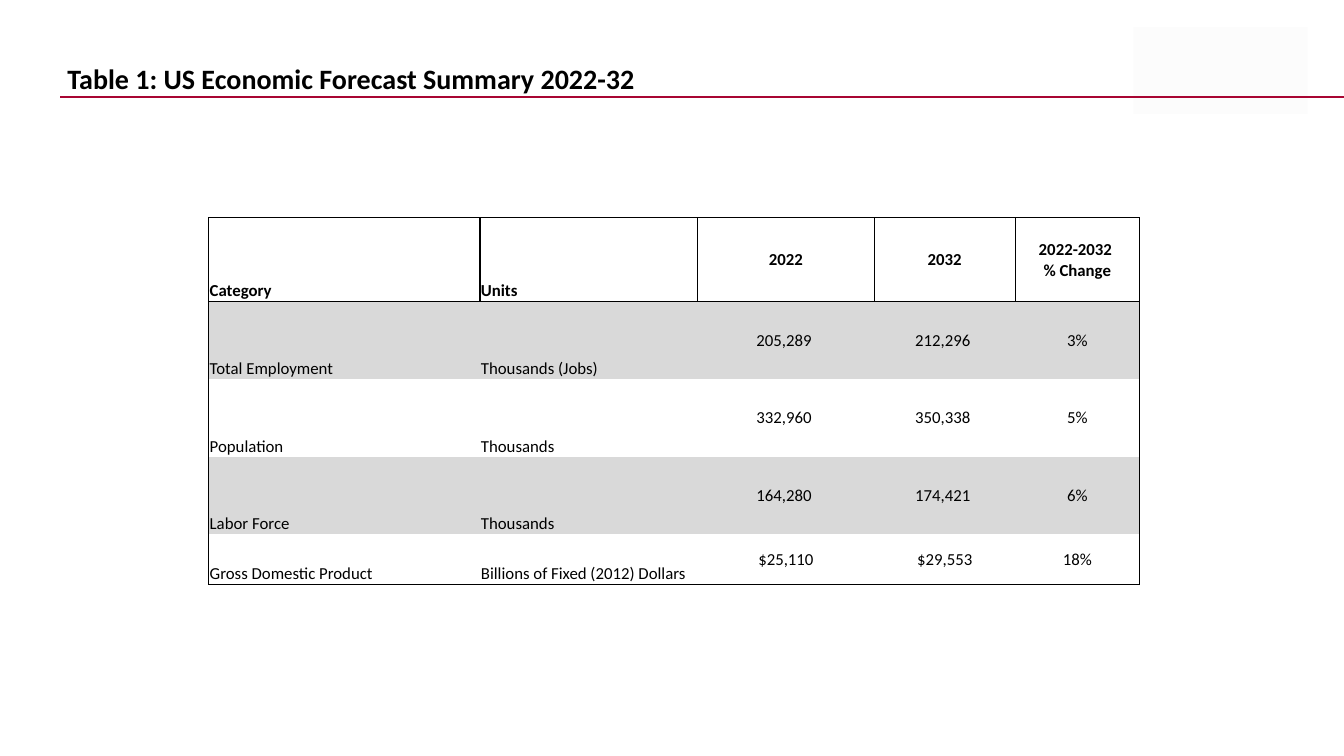
from lxml.etree import SubElement as Sub
from pptx import Presentation
from pptx.dml.color import RGBColor as RGB
from pptx.enum.shapes import MSO_CONNECTOR as LINK, MSO_SHAPE as FORM
from pptx.enum.text import MSO_ANCHOR as ANCHOR, PP_ALIGN as ALIGN
from pptx.oxml import parse_xml
from pptx.oxml.ns import nsdecls, qn
from pptx.util import Inches, Pt

TITLE = "Table 1: US Economic Forecast Summary 2022-32"
ROWS = [
    ("Category", "Units", "2022", "2032", "2022-2032 \n% Change"),
    ("Total Employment", "Thousands (Jobs)", "205,289 ", "212,296 ", "3%"),
    ("Population", "Thousands", "332,960 ", "350,338 ", "5%"),
    ("Labor Force", "Thousands", "164,280 ", "174,421 ", "6%"),
    ("Gross Domestic Product", "Billions of Fixed (2012) Dollars",
     "$25,110", "$29,553", "18%"),
]
WIDTHS = (2.69, 2.16, 1.75, 1.4, 1.23)
HEIGHTS = (0.83, 0.77, 0.77, 0.77, 0.5)
COLORS = {"ink": "000000", "rule": "A80532", "band": "D9D9D9", "logo": "FCFCFC"}
HEAD = {"name": "Calibri", "size": Pt(20), "bold": True}
CELL = {"name": "Calibri", "size": Pt(12)}
INSETS = {"margin_left": Inches(0.01), "margin_right": Inches(0.01),
          "margin_top": Inches(0.01), "margin_bottom": 0}


def tint(key):
    return RGB.from_string(COLORS[key])


def apply(item, values):
    for name, value in values.items():
        setattr(item, name, value)


def style(frame, values, align=ALIGN.LEFT):
    for para in frame.paragraphs:
        para.alignment = align
        apply(para.font, values)
        para.font.color.rgb = tint("ink")


def border(cell, sides):
    props = cell._tc.get_or_add_tcPr()
    for spot, side in enumerate("LRTB"):
        line = parse_xml(f'<a:ln{side} {nsdecls("a")} w="12700"/>')
        if side in sides:
            fill = Sub(line, qn("a:solidFill"))
            Sub(fill, qn("a:srgbClr"), val=COLORS["ink"])
        else:
            Sub(line, qn("a:noFill"))
        props.insert(spot, line)


def edges(row, col):
    if row == 0:
        return "LRTB"
    tests = {"L": col == 0, "R": col == len(WIDTHS) - 1,
             "T": row == 1, "B": row == len(ROWS) - 1}
    return [side for side, on in tests.items() if on]


def add_frame(slide):
    logo = slide.shapes.add_shape(FORM.RECTANGLE, Inches(11.24), Inches(0.27),
                                  Inches(1.73), Inches(0.86))
    logo.shadow.inherit = False
    logo.fill.solid()
    logo.fill.fore_color.rgb = tint("logo")
    logo.line.fill.background()
    rule = slide.shapes.add_connector(LINK.STRAIGHT, Inches(0.6), Inches(0.96),
                                      Inches(13.33), Inches(0.96))
    rule.line.color.rgb = tint("rule")
    rule.line.width = Pt(1.5)
    Sub(rule._element.spPr, qn("a:effectLst"))
    title = slide.shapes.add_textbox(Inches(0.57), Inches(0.56),
                                     Inches(10.18), Inches(0.44)).text_frame
    title.word_wrap = True
    title.text = TITLE
    style(title, HEAD)


def add_grid(slide):
    grid = slide.shapes.add_table(len(ROWS), len(WIDTHS), Inches(2.07), Inches(2.16),
                                  Inches(sum(WIDTHS)), Inches(sum(HEIGHTS))).table
    apply(grid, {"first_row": False, "horz_banding": False})
    for col, width in zip(grid.columns, WIDTHS):
        col.width = Inches(width)
    for row, height in zip(grid.rows, HEIGHTS):
        row.height = Inches(height)
    for r, texts in enumerate(ROWS):
        for c, text in enumerate(texts):
            cell = grid.cell(r, c)
            cell.text = text
            apply(cell, INSETS)
            label = c < 2
            cell.vertical_anchor = ANCHOR.BOTTOM if label else ANCHOR.MIDDLE
            style(cell.text_frame, {**CELL, "bold": r == 0},
                  ALIGN.LEFT if label else ALIGN.CENTER)
            if r % 2:
                cell.fill.solid()
                cell.fill.fore_color.rgb = tint("band")
            else:
                cell.fill.background()
            border(cell, edges(r, c))


def main():
    """Build the economic forecast table slide."""
    deck = Presentation()
    apply(deck, {"slide_width": Inches(13.33), "slide_height": Inches(7.5)})
    slide = deck.slides.add_slide(deck.slide_layouts[6])
    add_frame(slide)
    add_grid(slide)
    deck.save("out.pptx")


if __name__ == "__main__":
    main()
